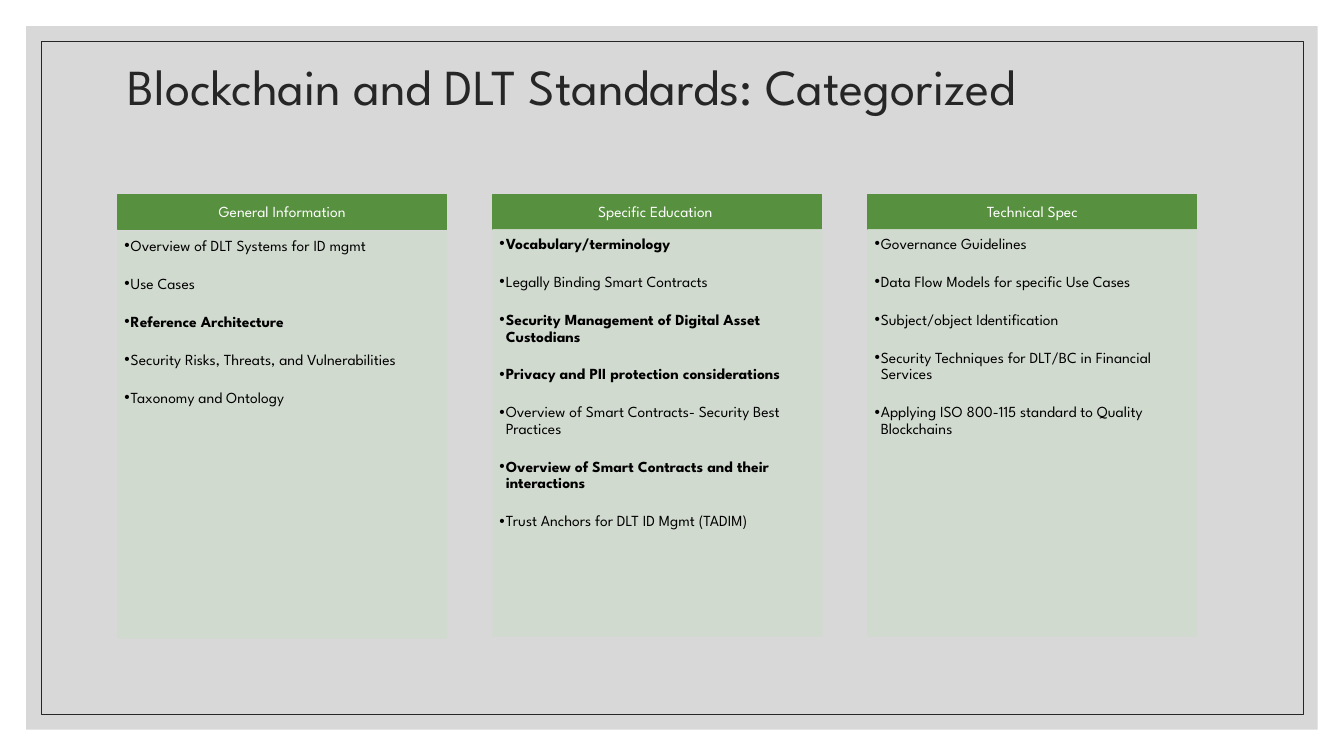
from lxml import etree
from pptx import Presentation
from pptx.dml.color import RGBColor
from pptx.enum.shapes import MSO_SHAPE as Shape
from pptx.enum.text import MSO_ANCHOR as Anchor, PP_ALIGN as Align
from pptx.oxml.ns import qn
from pptx.util import Inches, Pt

FONT = "League Spartan"
BULLET_FONT = "Arial"
WHITE = RGBColor(0xFF, 0xFF, 0xFF)
BLACK = RGBColor(0x00, 0x00, 0x00)
DARK = RGBColor(0x26, 0x26, 0x26)
GRAY = RGBColor(0xBF, 0xBF, 0xBF)
GREEN = RGBColor(0x57, 0x90, 0x3F)
PALE_GREEN = RGBColor(0xD1, 0xDB, 0xCF)

COLUMN_LEFT, COLUMN_STEP, COLUMN_WIDTH = 1.17, 3.72, 3.26
HEADER_TOP, HEADER_HEIGHT, BODY_HEIGHT = 1.93, 0.35, 4.03
BODY_INSET = Pt(4.62)
BULLET_INDENT = Pt(4.5)

# Heading, top of the body, and items as (text, bold)
COLUMNS = [
    ("General Information", 2.3, [
        ("Overview of DLT Systems for ID mgmt", False),
        ("Use Cases", False),
        ("Reference Architecture", True),
        ("Security Risks, Threats, and Vulnerabilities", False),
        ("Taxonomy and Ontology", False),
    ]),
    ("Specific Education ", 2.28, [
        ("Vocabulary/terminology", True),
        ("Legally Binding Smart Contracts", False),
        ("Security Management of Digital Asset Custodians", True),
        ("Privacy and PII protection considerations", True),
        ("Overview of Smart Contracts- Security Best Practices", False),
        ("Overview of Smart Contracts and their interactions", True),
        ("Trust Anchors for DLT ID Mgmt (TADIM)", False),
    ]),
    ("Technical Spec", 2.28, [
        ("Governance Guidelines", False),
        ("Data Flow Models for specific Use Cases", False),
        ("Subject/object Identification", False),
        ("Security Techniques for DLT/BC in Financial Services", False),
        ("Applying ISO 800-115 standard to Quality Blockchains", False),
    ]),
]


def set_opacity(shape, percent):
    """Make every solid colour of the shape, fill and line, translucent."""
    for color in shape._element.spPr.iter(qn("a:srgbClr")):
        etree.SubElement(color, qn("a:alpha"), val=str(percent * 1000))


def add_rectangle(slide, left, top, width, height, fill=None, line=None,
                  line_width=1, opacity=100):
    shape = slide.shapes.add_shape(Shape.RECTANGLE, Inches(left), Inches(top),
                                   Inches(width), Inches(height))
    shape.shadow.inherit = False
    for paint, color in ((shape.fill, fill), (shape.line.fill, line)):
        if color is None:
            paint.background()
        else:
            paint.solid()
            paint.fore_color.rgb = color
    if line is not None:
        shape.line.width = Pt(line_width)
    if opacity < 100:
        set_opacity(shape, opacity)
    return shape


def set_frame(shape, anchor, left, top, right, bottom):
    frame = shape.text_frame
    frame.word_wrap = True
    frame.vertical_anchor = anchor
    frame.margin_left, frame.margin_top = left, top
    frame.margin_right, frame.margin_bottom = right, bottom
    return frame


def write(paragraph, text, size, color, align=Align.LEFT, bold=False):
    paragraph.text = text
    paragraph.alignment = align
    paragraph.line_spacing = 0.9
    for run in paragraph.runs:
        run.font.name = FONT
        run.font.size = Pt(size)
        run.font.bold = bold
        run.font.color.rgb = color


def add_bullet(paragraph):
    properties = paragraph._p.get_or_add_pPr()
    properties.set("marL", str(BULLET_INDENT))
    properties.set("indent", str(-BULLET_INDENT))
    etree.SubElement(properties, qn("a:buFont"), typeface=BULLET_FONT)
    etree.SubElement(properties, qn("a:buChar"), char="•")


def add_title(slide, text):
    box = slide.shapes.add_textbox(Inches(1.17), Inches(0.72), Inches(11), Inches(0.34))
    side, edge = Inches(0.1), Inches(0.05)
    frame = set_frame(box, Anchor.MIDDLE, side, edge, side, edge)
    write(frame.paragraphs[0], text, 36, DARK)


def add_column(slide, left, heading, body_top, items):
    # Heading bar
    header = add_rectangle(slide, left, HEADER_TOP, COLUMN_WIDTH, HEADER_HEIGHT,
                           GREEN, GREEN)
    side, edge = Inches(0.09), Inches(0.05)
    frame = set_frame(header, Anchor.MIDDLE, side, edge, side, edge)
    write(frame.paragraphs[0], heading, 11, WHITE, Align.CENTER)

    # Bulleted body
    body = add_rectangle(slide, left, body_top, COLUMN_WIDTH, BODY_HEIGHT,
                         PALE_GREEN, PALE_GREEN, opacity=90)
    frame = set_frame(body, Anchor.TOP, BODY_INSET, BODY_INSET,
                      Inches(0.09), Inches(0.1))
    for index, (text, bold) in enumerate(items):
        paragraph = frame.add_paragraph() if index else frame.paragraphs[0]
        write(paragraph, text, 11, BLACK, bold=bold)
        paragraph.space_after = Pt(15.2)
        add_bullet(paragraph)


def main():
    presentation = Presentation()
    presentation.slide_width = Inches(13.33)
    presentation.slide_height = Inches(7.5)
    slide = presentation.slides.add_slide(presentation.slide_layouts[6])

    # Gray panel and thin frame
    add_rectangle(slide, 0.26, 0.26, 12.81, 6.98, fill=GRAY, opacity=60)
    add_rectangle(slide, 0.41, 0.41, 12.52, 6.68, line=DARK, line_width=0.5)

    add_title(slide, "Blockchain and DLT Standards: Categorized")
    for index, column in enumerate(COLUMNS):
        add_column(slide, COLUMN_LEFT + index * COLUMN_STEP, *column)

    presentation.save("out.pptx")


if __name__ == "__main__":
    main()
